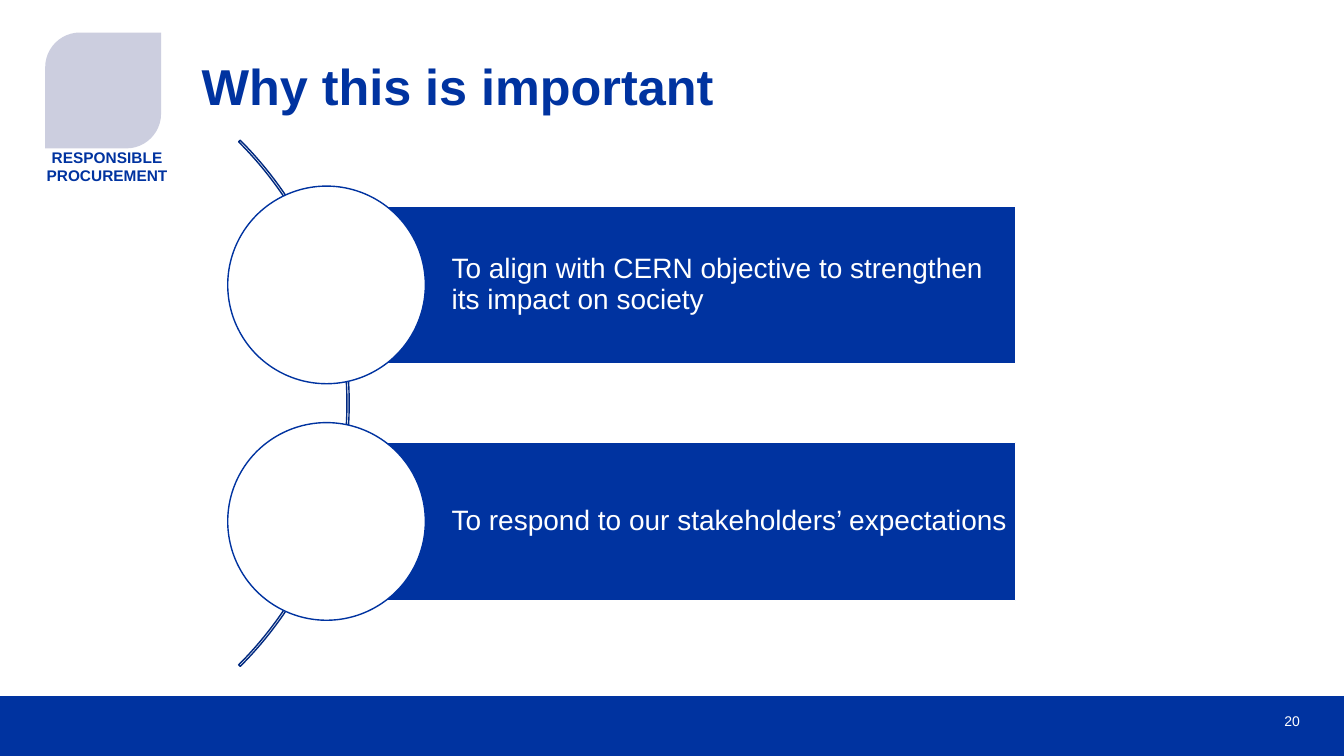
from dataclasses import dataclass

from pptx import Presentation
from pptx.dml.color import RGBColor
from pptx.enum.shapes import MSO_SHAPE
from pptx.enum.text import MSO_ANCHOR, PP_ALIGN
from pptx.shapes.autoshape import Shape
from pptx.slide import Slide
from pptx.util import Cm, Pt


@dataclass(frozen=True)
class Theme:
    blue: RGBColor = RGBColor(0x00, 0x33, 0xA0)
    dark_blue: RGBColor = RGBColor(0x00, 0x29, 0x80)
    grey: RGBColor = RGBColor(0xCC, 0xCE, 0xDF)
    white: RGBColor = RGBColor(0xFF, 0xFF, 0xFF)
    font: str = "Arial"
    title_size: int = 36
    reason_size: int = 20
    label_size: int = 11
    number_size: int = 10


THEME = Theme()


@dataclass(frozen=True)
class Box:
    """Position and size in centimetres."""
    left: float
    top: float
    width: float
    height: float

    def lengths(self) -> tuple[Cm, Cm, Cm, Cm]:
        return Cm(self.left), Cm(self.top), Cm(self.width), Cm(self.height)


@dataclass(frozen=True)
class Label:
    text: str
    box: Box
    size: int
    color: RGBColor
    bold: bool = False
    align: PP_ALIGN = PP_ALIGN.LEFT
    anchor: MSO_ANCHOR = MSO_ANCHOR.TOP
    line_spacing: float = 1.0


def add_figure(slide: Slide, kind: MSO_SHAPE, box: Box,
               fill: RGBColor | None = None, line: RGBColor | None = None) -> Shape:
    shape = slide.shapes.add_shape(kind, *box.lengths())
    shape.shadow.inherit = False
    if fill is None:
        shape.fill.background()
    else:
        shape.fill.solid()
        shape.fill.fore_color.rgb = fill
    if line is None:
        shape.line.fill.background()
    else:
        shape.line.color.rgb = line
        shape.line.width = Pt(1)
    return shape


def write_text(shape: Shape, label: Label,
               margins: tuple[float, float, float, float] = (0, 0, 0, 0)) -> None:
    frame = shape.text_frame
    frame.word_wrap = True
    frame.vertical_anchor = label.anchor
    (frame.margin_left, frame.margin_top,
     frame.margin_right, frame.margin_bottom) = map(Cm, margins)
    paragraph = frame.paragraphs[0]
    paragraph.text = label.text
    paragraph.alignment = label.align
    paragraph.line_spacing = label.line_spacing
    font = paragraph.font
    font.name, font.size, font.bold = THEME.font, Pt(label.size), label.bold
    font.color.rgb = label.color


def add_label(slide: Slide, label: Label) -> None:
    write_text(slide.shapes.add_textbox(*label.box.lengths()), label)


def add_reason(slide: Slide, text: str, middle: float) -> None:
    """Draw a bar with its circle, both centred on the same height."""
    bar_height, diameter = 3.98, 4.98
    bar_box = Box(8.23, middle - bar_height / 2, 17.37, bar_height)
    bar = add_figure(slide, MSO_SHAPE.RECTANGLE, bar_box, THEME.blue, THEME.white)
    label = Label(text, bar_box, THEME.reason_size, THEME.white,
                  anchor=MSO_ANCHOR.MIDDLE, line_spacing=0.9)
    write_text(bar, label, (3.15, 0.15, 0.15, 0.15))
    circle_box = Box(bar_box.left - diameter / 2, middle - diameter / 2, diameter, diameter)
    add_figure(slide, MSO_SHAPE.OVAL, circle_box, THEME.white, THEME.blue)


REASONS = (
    "To align with CERN objective to strengthen its impact on society",
    "To respond to our stakeholders’ expectations",
)
FIRST_MIDDLE, REASON_PITCH = 7.18, 5.96

LABELS = (
    Label("20", Box(30.86, 17.65, 1.9, 1.02), THEME.number_size, THEME.white,
          align=PP_ALIGN.RIGHT, anchor=MSO_ANCHOR.MIDDLE),
    Label("RESPONSIBLE PROCUREMENT", Box(1.1, 3.73, 3.2, 0.9), THEME.label_size,
          THEME.blue, bold=True, align=PP_ALIGN.CENTER),
    Label("Why this is important", Box(5.08, 1.55, 26.26, 2.97), THEME.title_size,
          THEME.blue, bold=True, line_spacing=0.9),
)


def main() -> None:
    presentation = Presentation()
    presentation.slide_width, presentation.slide_height = Cm(33.87), Cm(19.05)
    slide = presentation.slides.add_slide(presentation.slide_layouts[6])

    # Footer band and corner emblem
    add_figure(slide, MSO_SHAPE.RECTANGLE, Box(0, 17.54, 33.87, 1.51), THEME.blue)
    emblem = add_figure(slide, MSO_SHAPE.ROUND_2_DIAG_RECTANGLE,
                        Box(1.14, 0.82, 2.92, 2.92), THEME.grey)
    emblem.adjustments[0] = 0.3

    # Title, emblem caption and page number
    for label in LABELS:
        add_label(slide, label)

    # Arc behind the circles, from 315 to 45 degrees
    arc = add_figure(slide, MSO_SHAPE.BLOCK_ARC, Box(-9.95, 0.79, 18.75, 18.75),
                     line=THEME.dark_blue)
    for index, value in enumerate((189, 27, 0.003)):
        arc.adjustments[index] = value

    # Reasons
    for index, text in enumerate(REASONS):
        add_reason(slide, text, FIRST_MIDDLE + index * REASON_PITCH)

    presentation.save("out.pptx")


if __name__ == "__main__":
    main()
